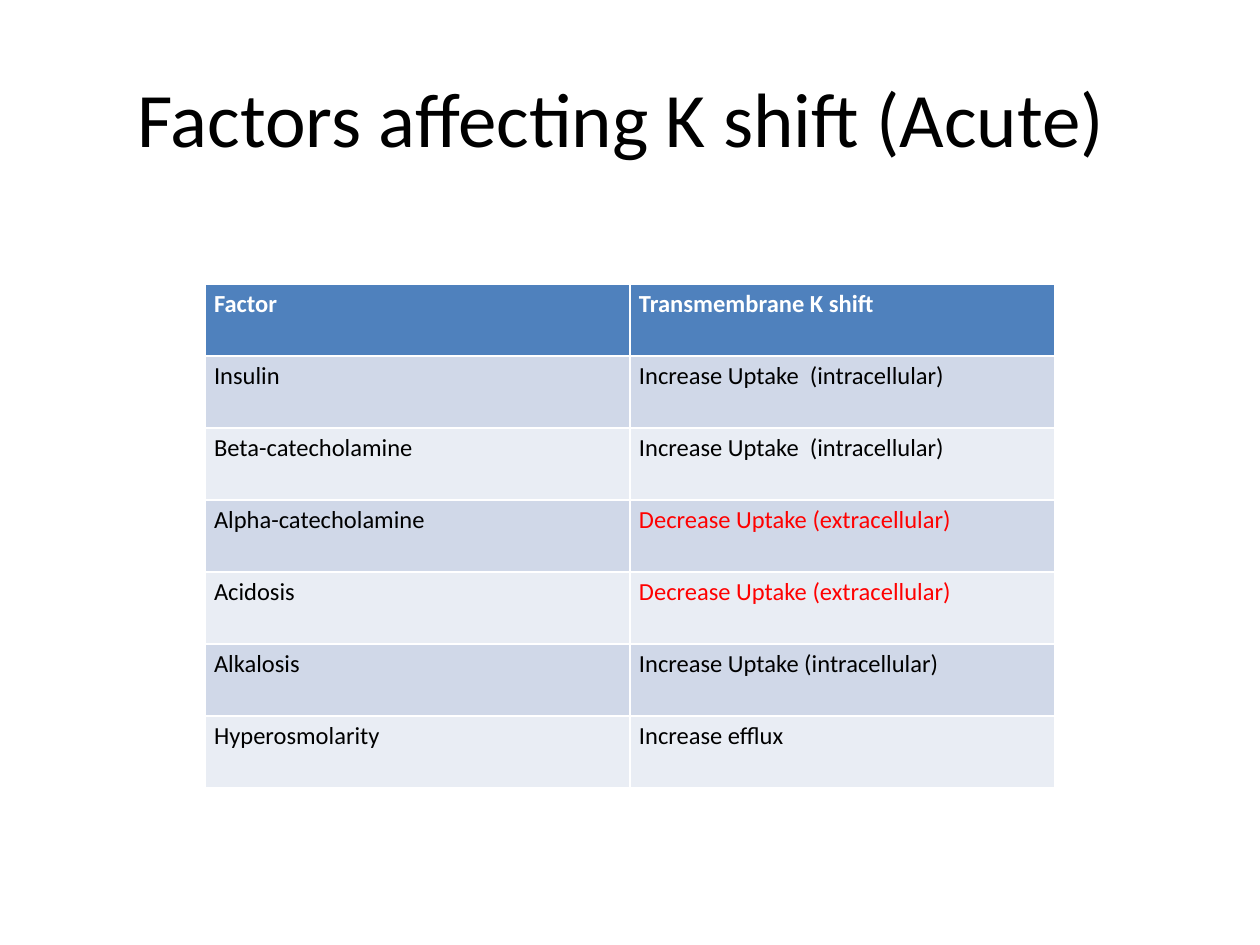
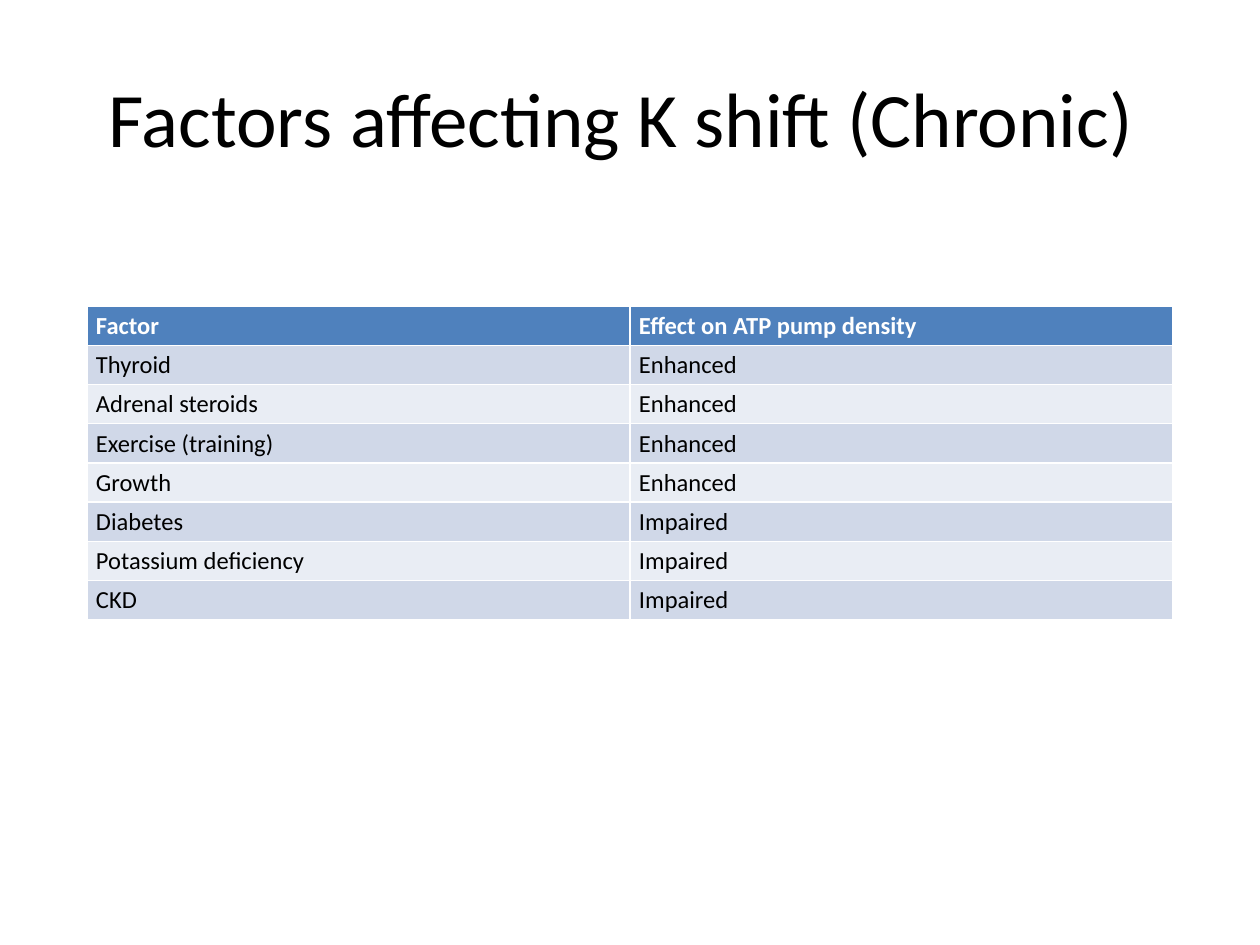
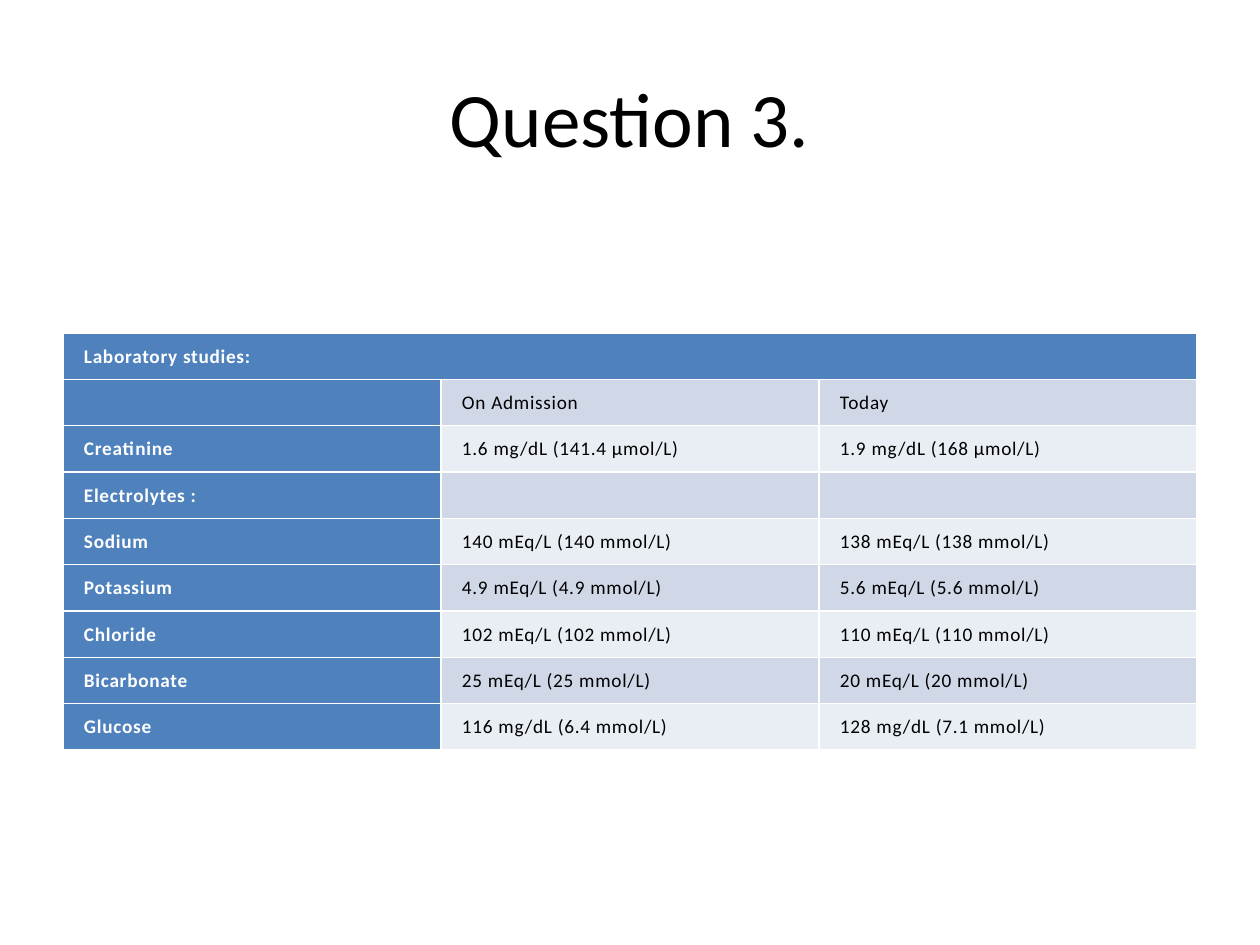
import pptx
import pptx.util
import pptx.dml.color
import pptx.enum.text

PX = pptx.util.Inches(1) / 126
FONT = "Calibri"
COLORS = {
    "header": "4F81BD",
    "band_dark": "D0D8E8",
    "band_light": "E9EDF4",
    "text": "000000",
    "light_text": "FFFFFF",
    "alert": "FF0000",
}
MIDDLE = pptx.enum.text.MSO_ANCHOR.MIDDLE
TITLE_BOX = (63, 38, 1134, 158)

FACTOR_STYLE = {
    "size": 14, "spacing": None, "tracking": 0, "first_column": False,
    "margins": {"margin_left": 9, "margin_right": 9, "margin_top": 5, "margin_bottom": 4},
}
LAB_STYLE = {
    "size": 11, "spacing": 1.07, "tracking": 40, "first_column": True,
    "margins": {"margin_left": 21, "margin_right": 21, "margin_top": 10, "margin_bottom": 10},
}

SLIDES = [
    {
        "title": "Factors affecting K shift (Acute) ",
        "box": (205, 284, 850, 504),
        "style": FACTOR_STYLE,
        "rows": [
            ("Factor", "Transmembrane K shift"),
            ("Insulin", "Increase Uptake  (intracellular)"),
            ("Beta-catecholamine", "Increase Uptake  (intracellular)"),
            ("Alpha-catecholamine", "Decrease Uptake (extracellular)"),
            ("Acidosis", "Decrease Uptake (extracellular)"),
            ("Alkalosis", "Increase Uptake (intracellular)"),
            ("Hyperosmolarity", "Increase efflux"),
        ],
    },
    {
        "title": "Factors affecting K shift (Chronic) ",
        "box": (87, 306, 1086, 314),
        "style": FACTOR_STYLE,
        "rows": [
            ("Factor", "Effect on ATP pump density"),
            ("Thyroid", "Enhanced"),
            ("Adrenal steroids", "Enhanced"),
            ("Exercise (training)", "Enhanced"),
            ("Growth", "Enhanced"),
            ("Diabetes", "Impaired"),
            ("Potassium deficiency", "Impaired"),
            ("CKD", "Impaired"),
        ],
    },
    {
        "title": "Question 3.",
        "box": (63, 333, 1134, 417),
        "style": LAB_STYLE,
        "rows": [
            ("Laboratory studies:", "", ""),
            ("", "On Admission", "Today"),
            ("Creatinine", "1.6 mg/dL (141.4 µmol/L)", "1.9 mg/dL (168 µmol/L)"),
            ("Electrolytes :", "", ""),
            ("Sodium", "140 mEq/L (140 mmol/L)", "138 mEq/L (138 mmol/L)"),
            ("Potassium", "4.9 mEq/L (4.9 mmol/L)", "5.6 mEq/L (5.6 mmol/L)"),
            ("Chloride", "102 mEq/L (102 mmol/L)", "110 mEq/L (110 mmol/L)"),
            ("Bicarbonate", "25 mEq/L (25 mmol/L)", "20 mEq/L (20 mmol/L)"),
            ("Glucose", "116 mg/dL (6.4 mmol/L)", "128 mg/dL (7.1 mmol/L)"),
        ],
    },
]


def emu(pixels):
    return pptx.util.Emu(round(pixels * PX))


def rgb(name):
    return pptx.dml.color.RGBColor.from_string(COLORS[name])


def set_all(target, values):
    for name, value in values.items():
        setattr(target, name, value)


def format_font(font, size, color, bold=False):
    set_all(font, {"name": FONT, "size": pptx.util.Pt(size), "bold": bold})
    font.color.rgb = rgb(color)


def add_title(slide, text):
    title = slide.shapes.title
    set_all(title, dict(zip(("left", "top", "width", "height"), map(emu, TITLE_BOX))))
    title.text_frame.vertical_anchor = MIDDLE
    paragraph = title.text_frame.paragraphs[0]
    paragraph.alignment = pptx.enum.text.PP_ALIGN.CENTER
    run = paragraph.add_run()
    run.text = text
    format_font(run.font, 44, "text")


def fill_cell(cell, text, style, fill, color, bold):
    cell.fill.solid()
    cell.fill.fore_color.rgb = rgb(fill)
    set_all(cell, {side: emu(length) for side, length in style["margins"].items()})
    paragraph = cell.text_frame.paragraphs[0]
    paragraph.line_spacing = style["spacing"]
    if not text:
        paragraph._p.get_or_add_endParaRPr().set("sz", str(style["size"] * 100))
        return
    run = paragraph.add_run()
    run.text = text
    format_font(run.font, style["size"], color, bold)
    if style["tracking"]:
        run.font._element.get_or_add_rPr().set("spc", str(style["tracking"])) if hasattr(
            run.font._element, "get_or_add_rPr") else run.font._rPr.set("spc", str(style["tracking"]))


def add_table(slide, rows, box, style):
    left, top, width, height = box
    column_count = len(rows[0])
    table = slide.shapes.add_table(len(rows), column_count, *map(emu, box)).table
    table.first_col = style["first_column"]
    for column in table.columns:
        column.width = emu(width / column_count)
    for row_index, texts in enumerate(rows):
        table.rows[row_index].height = emu(height / len(rows))
        for column_index, text in enumerate(texts):
            heading = row_index == 0 or (style["first_column"] and column_index == 0)
            band = "band_dark" if row_index % 2 else "band_light"
            color = "alert" if text.startswith("Decrease") else "text"
            fill_cell(
                table.cell(row_index, column_index), text, style,
                "header" if heading else band,
                "light_text" if heading else color, heading,
            )
    if not any(rows[0][1:]):
        table.cell(0, 0).merge(table.cell(0, column_count - 1))
        table.cell(0, 0).vertical_anchor = MIDDLE


def main():
    presentation = pptx.Presentation()
    set_all(presentation, {"slide_width": emu(1260), "slide_height": emu(945)})
    for content in SLIDES:
        slide = presentation.slides.add_slide(presentation.slide_layouts[5])
        add_title(slide, content["title"])
        add_table(slide, content["rows"], content["box"], content["style"])
    presentation.save("out.pptx")


if __name__ == "__main__":
    main()
